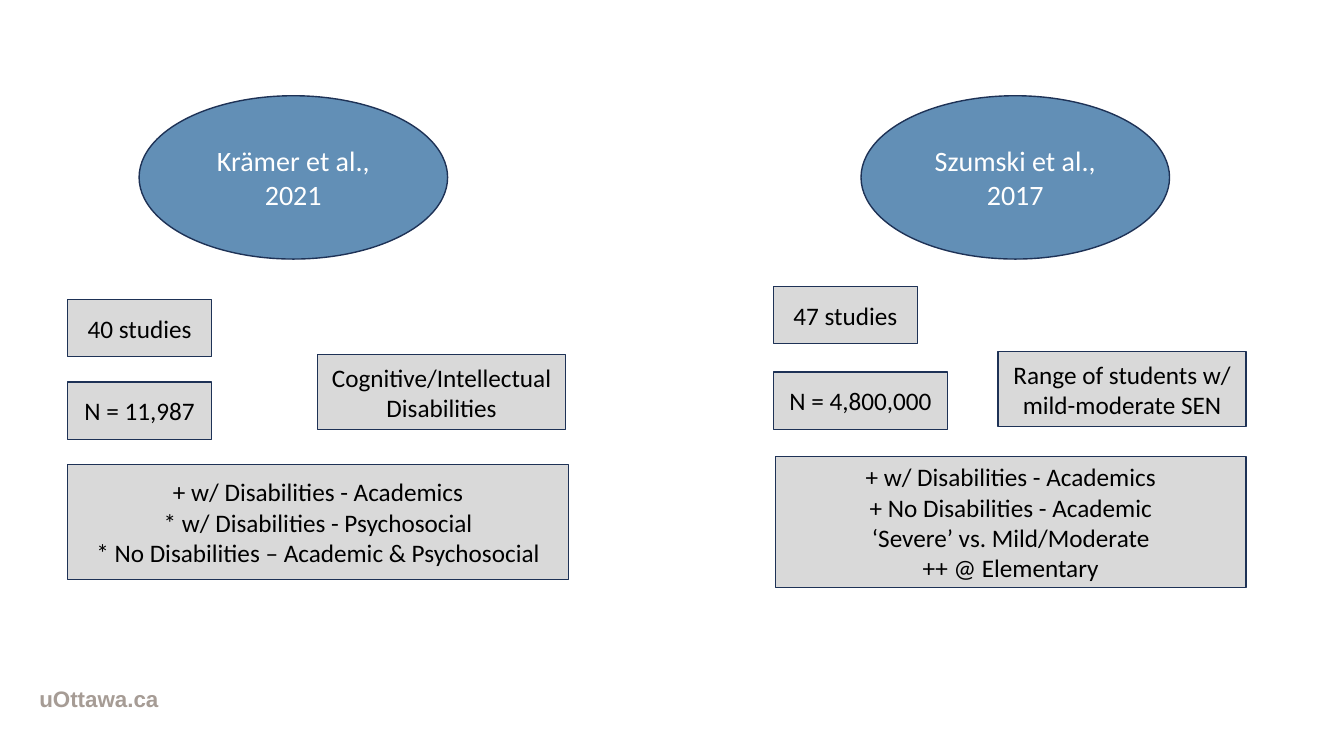
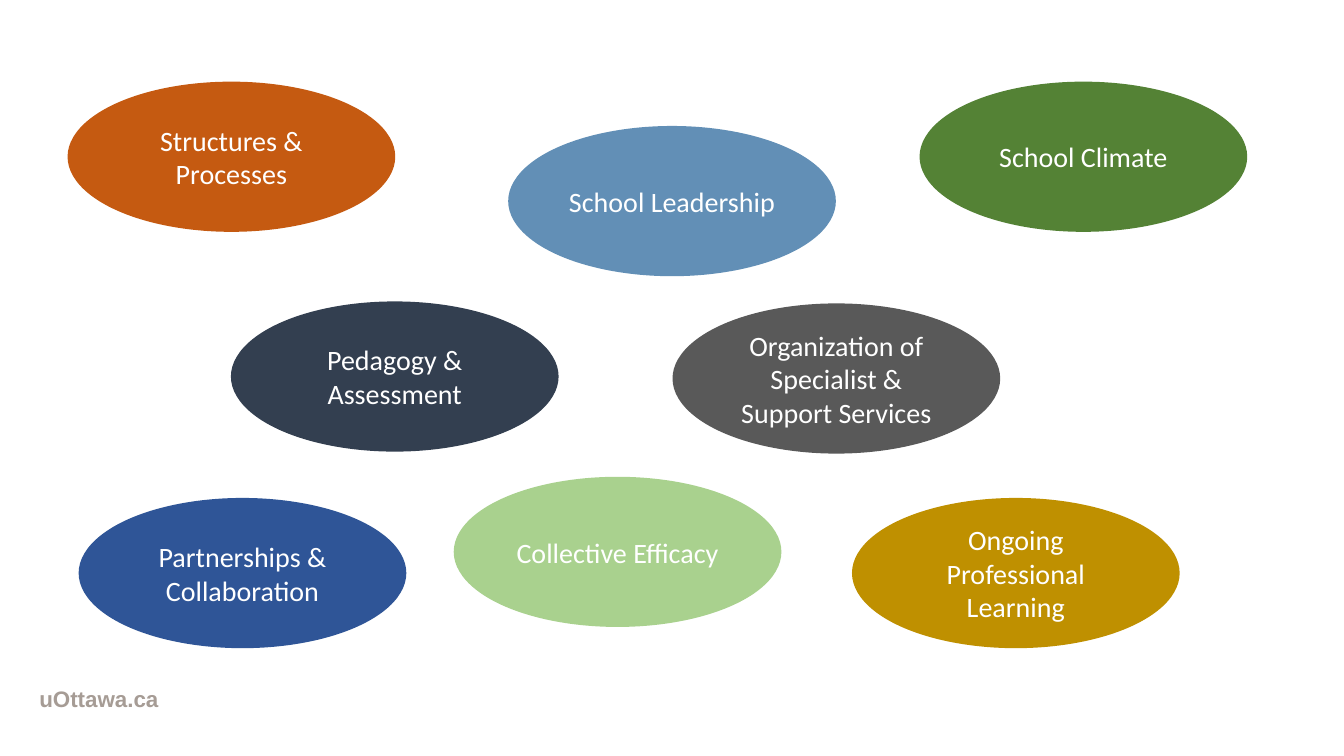
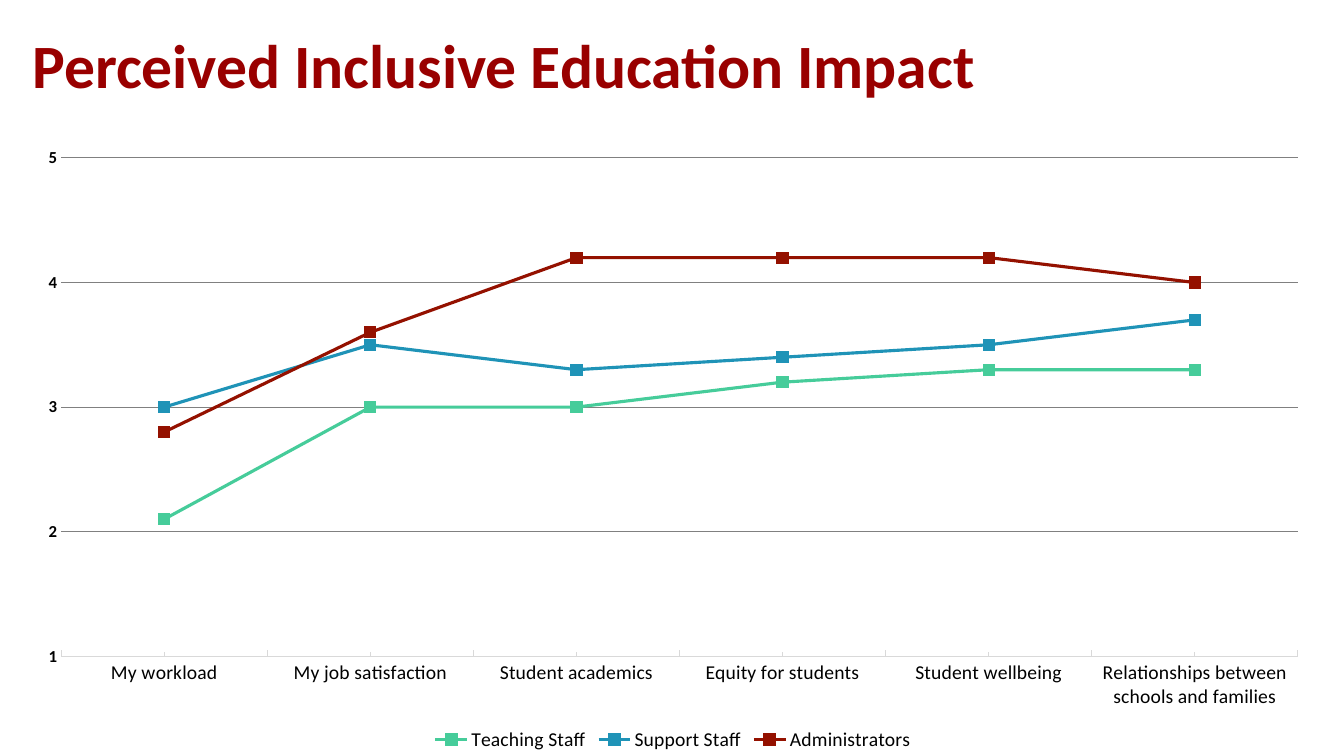
from lxml import etree
from pptx import Presentation
from pptx import util as u
from pptx.chart import data as chart_data
from pptx.dml.color import RGBColor
from pptx.enum import chart as chart_enum, shapes, text
from pptx.oxml import ns

COLOURS = {
    "white": "FFFFFF", "black": "000000", "outline": "1E3256", "box": "D9D9D9",
    "steel": "628FB6", "footer": "A69C95", "title": "990000", "green": "548235",
    "slate": "333F50", "grey": "595959", "blue": "2F5597", "gold": "BF9000",
    "orange": "C55A11", "lime": "A9D18E", "mint": "46CC9A", "teal": "1F93B7",
    "brick": "941100", "grid": "808080",
}
FONT = "Calibri"
FOOTER = "uOttawa.ca"
STUDY_SIZE = (3.06, 1.62)
FACTOR_SIZE = (3.25, 1.49)

STUDIES = [
    {"name": "Krämer et al., 2021", "at": (1.38, 0.95), "boxes": [
        (["40 studies"], (0.67, 2.97, 1.43, 0.57)),
        (["N = 11,987"], (0.67, 3.79, 1.43, 0.57)),
        (["Cognitive/Intellectual Disabilities"], (3.15, 3.52, 2.46, 0.74)),
        (["+ w/ Disabilities - Academics",
          "* w/ Disabilities - Psychosocial",
          "* No Disabilities – Academic & Psychosocial"], (0.67, 4.61, 4.97, 1.14)),
    ]},
    {"name": "Szumski et al., 2017", "at": (8.54, 0.95), "boxes": [
        (["47 studies"], (7.67, 2.84, 1.43, 0.57)),
        (["N = 4,800,000"], (7.67, 3.69, 1.73, 0.57)),
        (["Range of students w/ mild-moderate SEN"], (9.9, 3.49, 2.46, 0.74)),
        (["+ w/ Disabilities - Academics",
          "+ No Disabilities - Academic",
          "‘Severe’ vs. Mild/Moderate",
          "++ @ Elementary"], (7.69, 4.53, 4.67, 1.3)),
    ]},
]

FACTORS = [
    ("Structures & Processes", "orange", (0.67, 0.81)),
    ("School Leadership", "steel", (5.04, 1.25)),
    ("School Climate", "green", (9.12, 0.81)),
    ("Pedagogy & Assessment", "slate", (2.29, 2.99)),
    ("Organization of Specialist & Support Services", "grey", (6.67, 3.01)),
    ("Partnerships & Collaboration", "blue", (0.78, 4.94)),
    ("Collective Efficacy", "lime", (4.5, 4.73)),
    ("Ongoing Professional Learning", "gold", (8.45, 4.94)),
]

IMPACT_TITLE = "Perceived Inclusive Education Impact"
IMPACT_AREAS = ["My workload", "My job satisfaction", "Student academics",
                "Equity for students", "Student wellbeing",
                "Relationships between schools and families"]
IMPACT_RATINGS = [
    ("Teaching Staff", "mint", (2.1, 3, 3, 3.2, 3.3, 3.3)),
    ("Support Staff", "teal", (3, 3.5, 3.3, 3.4, 3.5, 3.7)),
    ("Administrators", "brick", (2.8, 3.6, 4.2, 4.2, 4.2, 4)),
]
PLOT_AREA = {"x": 0.03, "y": 0.04, "w": 0.95, "h": 0.8}


def colour(name):
    return RGBColor.from_string(COLOURS[name])


def inches(values):
    return [u.Inches(value) for value in values]


def style_font(font, size, shade, bold=False, name=FONT):
    font.name = name
    font.size = u.Pt(size)
    font.bold = bold
    font.color.rgb = colour(shade)


def add_span(para, wording, *style, **options):
    span = para.add_run()
    span.text = wording
    style_font(span.font, *style, **options)


def add_label(page, kind, place, lines, fill, size, shade, outline=None):
    box = page.shapes.add_shape(kind, *inches(place))
    box.shadow.inherit = False
    box.fill.solid()
    box.fill.fore_color.rgb = colour(fill)
    if outline:
        box.line.color.rgb = colour(outline)
        box.line.width = u.Pt(1)
    else:
        box.line.fill.background()
    frame = box.text_frame
    frame.word_wrap = True
    frame.vertical_anchor = text.MSO_ANCHOR.MIDDLE
    for index, line in enumerate(lines):
        para = frame.add_paragraph() if index else frame.paragraphs[0]
        para.alignment = text.PP_ALIGN.CENTER
        add_span(para, line, size, shade)


def add_oval(page, place, wording, fill, outline=None):
    add_label(page, shapes.MSO_SHAPE.OVAL, place, [wording], fill, 20, "white", outline)


def add_footer_page(deck):
    page = deck.slides.add_slide(deck.slide_layouts[6])
    frame = page.shapes.add_textbox(*inches((0.26, 6.73, 6.61, 0.39))).text_frame
    frame.word_wrap = True
    frame.margin_left = frame.margin_right = u.Inches(0.13)
    frame.margin_top = frame.margin_bottom = u.Inches(0.07)
    add_span(frame.paragraphs[0], FOOTER, 16, "footer", bold=True, name="Arial")
    return page


def build_studies(deck):
    page = add_footer_page(deck)
    for study in STUDIES:
        add_oval(page, study["at"] + STUDY_SIZE, study["name"], "steel", "outline")
        for lines, place in study["boxes"]:
            add_label(page, shapes.MSO_SHAPE.RECTANGLE, place, lines,
                      "box", 18, "black", "outline")


def build_factors(deck):
    page = add_footer_page(deck)
    for wording, fill, corner in FACTORS:
        add_oval(page, corner + FACTOR_SIZE, wording, fill)


def set_plot_area(chart):
    plot_area = chart.plots[0]._element.getparent()
    for old in plot_area.findall(ns.qn("c:layout")):
        plot_area.remove(old)
    layout = etree.Element(ns.qn("c:layout"))
    manual = etree.SubElement(layout, ns.qn("c:manualLayout"))
    settings = [("layoutTarget", "inner"), ("xMode", "edge"), ("yMode", "edge")]
    for tag, value in settings + list(PLOT_AREA.items()):
        etree.SubElement(manual, ns.qn("c:" + tag)).set("val", str(value))
    plot_area.insert(0, layout)


def add_impact_chart(page):
    ratings = chart_data.CategoryChartData()
    ratings.categories = IMPACT_AREAS
    for name, shade, values in IMPACT_RATINGS:
        ratings.add_series(name, values)
    chart = page.shapes.add_chart(chart_enum.XL_CHART_TYPE.LINE_MARKERS,
                                  *inches((0.22, 1.32, 12.91, 6.18)), ratings).chart
    style_font(chart.font, 10, "black")
    chart.has_title = False
    chart.has_legend = True
    chart.legend.position = chart_enum.XL_LEGEND_POSITION.BOTTOM
    chart.legend.include_in_layout = False
    style_font(chart.legend.font, 14, "black")
    chart.plots[0].vary_by_categories = False

    areas = chart.category_axis
    areas.major_tick_mark = areas.minor_tick_mark = chart_enum.XL_TICK_MARK.INSIDE
    areas.format.line.color.rgb = colour("box")
    areas.format.line.width = u.Pt(0.75)
    style_font(areas.tick_labels.font, 14, "black")

    scale = chart.value_axis
    scale.minimum_scale, scale.maximum_scale, scale.major_unit = 1, 5, 1
    scale.major_tick_mark = scale.minor_tick_mark = chart_enum.XL_TICK_MARK.NONE
    scale.format.line.fill.background()
    scale.major_gridlines.format.line.color.rgb = colour("grid")
    scale.major_gridlines.format.line.width = u.Pt(0.75)
    scale.tick_labels.number_format = "0"
    scale.tick_labels.number_format_is_linked = False
    style_font(scale.tick_labels.font, 12, "black", bold=True)

    for series, (name, shade, values) in zip(chart.plots[0].series, IMPACT_RATINGS):
        series.smooth = False
        series.format.line.color.rgb = colour(shade)
        series.format.line.width = u.Pt(2.25)
        series.marker.style = chart_enum.XL_MARKER_STYLE.SQUARE
        series.marker.size = 8
        series.marker.format.fill.solid()
        series.marker.format.fill.fore_color.rgb = colour(shade)
        series.marker.format.line.color.rgb = colour(shade)
    set_plot_area(chart)


def build_impact(deck):
    page = deck.slides.add_slide(deck.slide_layouts[5])
    title = page.shapes.title
    title.left, title.top, title.width, title.height = inches((0.22, 0.21, 11.34, 0.94))
    frame = title.text_frame
    frame.auto_size = text.MSO_AUTO_SIZE.NONE
    frame.vertical_anchor = text.MSO_ANCHOR.MIDDLE
    para = frame.paragraphs[0]
    para.alignment = text.PP_ALIGN.LEFT
    para.line_spacing = 0.9
    add_span(para, IMPACT_TITLE, 44, "title", bold=True)
    add_impact_chart(page)


def main():
    deck = Presentation()
    deck.slide_width, deck.slide_height = inches((13.33, 7.5))
    build_studies(deck)
    build_factors(deck)
    build_impact(deck)
    deck.save("out.pptx")


if __name__ == "__main__":
    main()
